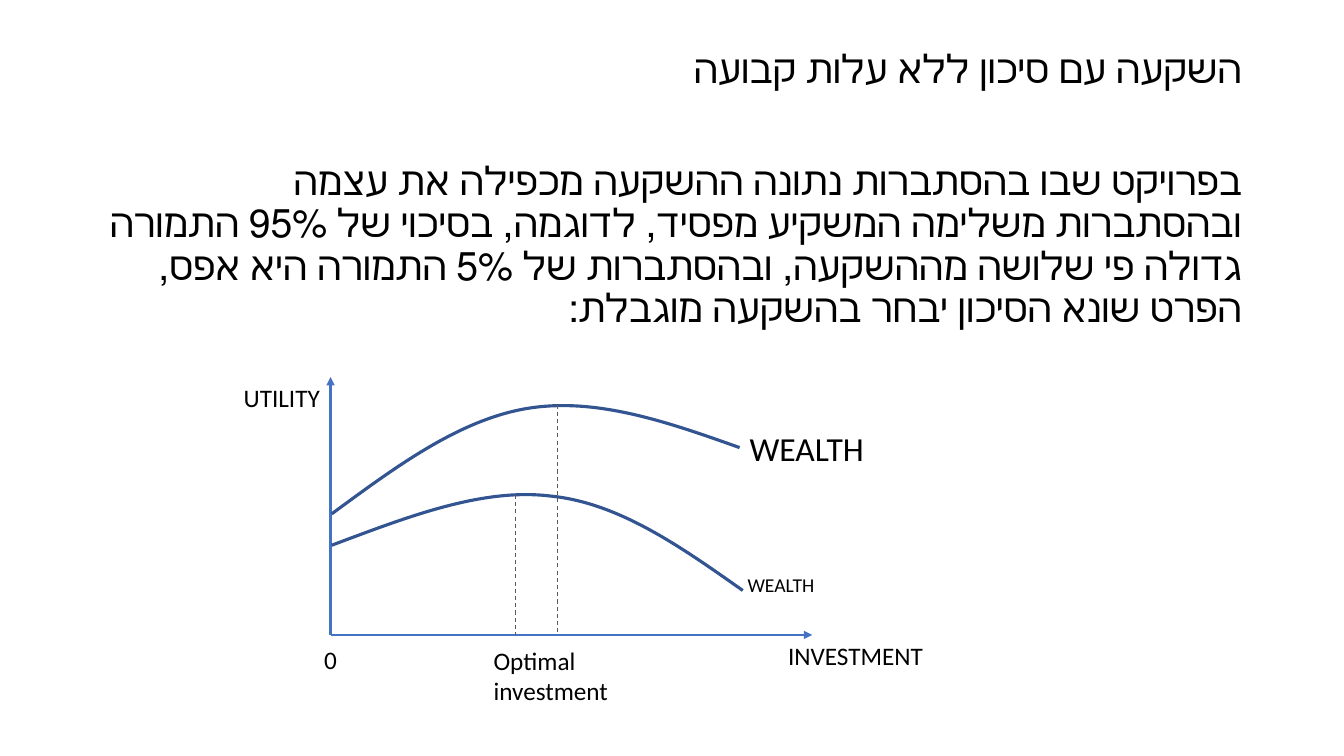
import pptx
import pptx.dml.color
import pptx.enum.dml
import pptx.enum.shapes
import pptx.enum.text
import pptx.oxml.ns
import pptx.oxml.xmlchemy
import pptx.util

Cm = pptx.util.Cm
Pt = pptx.util.Pt
qn = pptx.oxml.ns.qn
OxmlElement = pptx.oxml.xmlchemy.OxmlElement

COLORS = {"text": "000000", "axis": "4472C4", "curve": "325491", "guide": "595959"}
FONT = "Calibri"
ORIGIN_X, BASE_Y = 8.33, 16

TITLE = "השקעה עם סיכון ללא עלות קבועה"
BODY = (
    "בפרויקט שבו בהסתברות נתונה ההשקעה מכפילה את עצמה "
    "ובהסתברות משלימה המשקיע מפסיד, לדוגמה, בסיכוי של 95% התמורה "
    "גדולה פי שלושה מההשקעה, ובהסתברות של 5% התמורה היא אפס, "
    "הפרט שונא הסיכון יבחר בהשקעה מוגבלת:"
)

# text, left, top, width, height, size
LABELS = [
    ("INVESTMENT", 19.61, 16, 4.06, 1.02, 18),
    ("UTILITY", 5.89, 9.5, 4.06, 1.02, 18),
    ("0", 7.92, 16.1, 1.02, 1.02, 18),
    ("WEALTH", 18.59, 14.3, 5.56, 0.86, 14),
    ("WEALTH", 18.64, 10.67, 5.64, 1.27, 24),
    ("Optimal investment", 12.19, 16.13, 4.39, 1.8, 18),
]

# start point, then two control points and an end point per segment
CURVES = [
    [(8.36, 12.95), (9.98, 11.76), (11.58, 10.57), (13.31, 10.29),
     (15.04, 10.01), (16.84, 10.64), (18.64, 11.28)],
    [(8.36, 13.74), (10.26, 13.03), (12.14, 12.29), (13.87, 12.5),
     (15.6, 12.67), (17.17, 13.79), (18.72, 14.88)],
]

# x, top
GUIDES = [(14.05, 10.19), (12.98, 12.47)]


def rgb(name):
    return pptx.dml.color.RGBColor.from_string(COLORS[name])


def style_run(r, size):
    r.font.size = Pt(size)
    r.font.name = FONT
    r.font.color.rgb = rgb("text")


def add_text_frame(slide, left, top, width, height):
    sp = slide.shapes.add_textbox(Cm(left), Cm(top), Cm(width), Cm(height))
    sp.text_frame.word_wrap = True
    return sp.text_frame


def add_hebrew_text(slide):
    tf = add_text_frame(slide, 2.33, 1.12, 29.21, 16.03)
    tf.text = TITLE
    tf.add_paragraph().text = BODY
    for p in tf.paragraphs:
        p.alignment = pptx.enum.text.PP_ALIGN.RIGHT
        p.line_spacing = 0.9
        p._p.get_or_add_pPr().set("rtl", "1")
        style_run(p.runs[0], 28)
    tf.paragraphs[1].space_before = Pt(50)


def add_label(slide, text, left, top, width, height, size):
    tf = add_text_frame(slide, left, top, width, height)
    tf.auto_size = pptx.enum.text.MSO_AUTO_SIZE.SHAPE_TO_FIT_TEXT
    tf.text = text
    style_run(tf.paragraphs[0].runs[0], size)


def add_line(slide, start, end, color, width):
    line = slide.shapes.add_connector(
        pptx.enum.shapes.MSO_CONNECTOR.STRAIGHT,
        Cm(start[0]), Cm(start[1]), Cm(end[0]), Cm(end[1]))
    line.line.color.rgb = rgb(color)
    line.line.width = Pt(width)
    line._element.spPr.append(OxmlElement("a:effectLst"))
    return line


def add_axis(slide, start, end):
    line = add_line(slide, start, end, "axis", 1.5)
    arrow = OxmlElement("a:tailEnd")
    arrow.set("type", "triangle")
    line.line._get_or_add_ln().append(arrow)


def add_guide(slide, x, top):
    line = add_line(slide, (x, top), (x, BASE_Y), "guide", 0.75)
    line.line.dash_style = pptx.enum.dml.MSO_LINE.DASH


def add_curve(slide, points):
    """Draw a smooth curve by merging each three straight segments into a Bezier."""
    pts = [(Cm(x), Cm(y)) for x, y in points]
    builder = slide.shapes.build_freeform(*pts[0])
    builder.add_line_segments(pts[1:], close=False)
    sp = builder.convert_to_shape()
    segments = list(sp._element.iter(qn("a:lnTo")))
    for i in range(0, len(segments), 3):
        bezier = OxmlElement("a:cubicBezTo")
        segments[i].addprevious(bezier)
        for segment in segments[i:i + 3]:
            bezier.append(segment[0])
            segment.getparent().remove(segment)
    sp.shadow.inherit = False
    sp.fill.background()
    sp.line.color.rgb = rgb("curve")
    sp.line.width = Pt(2.25)


def main():
    prs = pptx.Presentation()
    prs.slide_width, prs.slide_height = Cm(33.87), Cm(19.05)
    slide = prs.slides.add_slide(prs.slide_layouts[6])
    add_hebrew_text(slide)
    add_axis(slide, (ORIGIN_X, BASE_Y), (20.47, BASE_Y))
    add_axis(slide, (ORIGIN_X, BASE_Y), (ORIGIN_X, 9.5))
    for points in CURVES:
        add_curve(slide, points)
    for x, top in GUIDES:
        add_guide(slide, x, top)
    for label in LABELS:
        add_label(slide, *label)
    prs.save("out.pptx")


if __name__ == "__main__":
    main()
